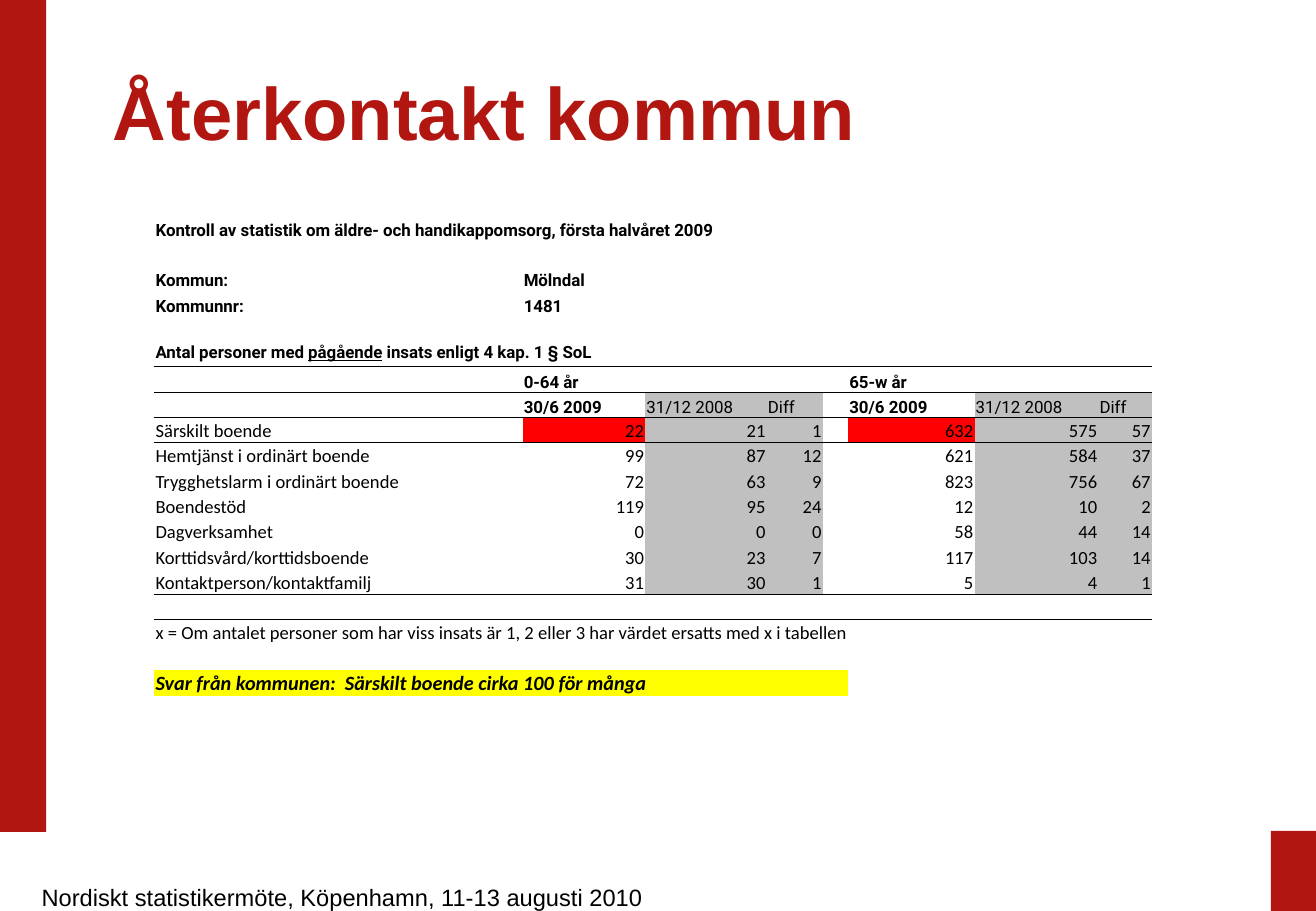
from dataclasses import dataclass

from lxml.etree import SubElement
from pptx import Presentation
from pptx.dml.color import RGBColor
from pptx.enum.shapes import MSO_SHAPE
from pptx.enum.text import MSO_ANCHOR, PP_ALIGN
from pptx.oxml import parse_xml
from pptx.oxml.ns import nsdecls, qn
from pptx.util import Inches, Pt


@dataclass(frozen=True)
class Theme:
    red: str = "B21611"
    ink: str = "000000"
    grey: str = "C0C0C0"
    alert: str = "FF0000"
    answer: str = "FFFF00"
    title_font: str = "Arial"
    head_font: str = "Roboto"
    body_font: str = "Calibri"
    title_size: int = 44
    footer_size: int = 14
    answer_size: int = 12
    body_size: int = 11
    head_size: int = 10
    empty_size: int = 8
    rule_width: float = 0.5
    plain_table: str = "{2D5ABB26-0587-4C30-8999-92F81FD0307C}"


class SlideBuilder:
    """Places elements; all lengths are percentages of the slide's size."""

    def __init__(self, presentation, theme):
        self.theme = theme
        self.width = presentation.slide_width
        self.height = presentation.slide_height
        self.slide = presentation.slides.add_slide(presentation.slide_layouts[6])

    def area(self, left, top, width, height):
        return (int(self.width * left / 100), int(self.height * top / 100),
                int(self.width * width / 100), int(self.height * height / 100))

    def style(self, paragraph, font, size, color, bold=False, italic=False):
        for run in paragraph.runs:
            run.font.name, run.font.size = font, Pt(size)
            run.font.bold, run.font.italic = bold, italic
            run.font.color.rgb = RGBColor.from_string(color)

    def block(self, *box):
        shape = self.slide.shapes.add_shape(MSO_SHAPE.RECTANGLE, *self.area(*box))
        shape.shadow.inherit = False
        shape.fill.solid()
        shape.fill.fore_color.rgb = RGBColor.from_string(self.theme.red)
        shape.line.fill.background()

    def text(self, box, text, size, color, bold=False,
             align=PP_ALIGN.LEFT, anchor=MSO_ANCHOR.TOP, spacing=1.0):
        text_frame = self.slide.shapes.add_textbox(*self.area(*box)).text_frame
        text_frame.word_wrap = True
        text_frame.vertical_anchor = anchor
        text_frame.text = text
        paragraph = text_frame.paragraphs[0]
        paragraph.alignment, paragraph.line_spacing = align, spacing
        self.style(paragraph, self.theme.title_font, size, color, bold)

    def table(self, box, row_count, column_weights):
        left, top, width, height = self.area(*box)
        frame = self.slide.shapes.add_table(
            row_count, len(column_weights), left, top, width, height)
        table = frame.table
        table.first_row = table.horz_banding = False
        table._tbl.tblPr.find(qn("a:tableStyleId")).text = self.theme.plain_table
        for column, weight in zip(table.columns, column_weights):
            column.width = int(width * weight / sum(column_weights))
        for row in table.rows:
            row.height = height // row_count
        for cell in table.iter_cells():
            cell.margin_left = cell.margin_right = cell.margin_top = Inches(0.01)
            cell.margin_bottom = 0
            cell.vertical_anchor = MSO_ANCHOR.BOTTOM
            cell.fill.background()
            # Small empty cells keep the rows from growing
            SubElement(cell.text_frame.paragraphs[0]._p, qn("a:endParaRPr"),
                       sz=str(self.theme.empty_size * 100))
        return table

    def cell(self, cell, text, font, size, bold=False, italic=False, right=False):
        cell.text_frame.text = text
        paragraph = cell.text_frame.paragraphs[0]
        paragraph.alignment = PP_ALIGN.RIGHT if right else PP_ALIGN.LEFT
        self.style(paragraph, font, size, self.theme.ink, bold, italic)

    def head(self, cell, text, bold=True):
        self.cell(cell, text, self.theme.head_font, self.theme.head_size, bold)

    def body(self, cell, text, right=False):
        self.cell(cell, text, self.theme.body_font, self.theme.body_size, right=right)

    def paint(self, cell, color):
        cell.fill.solid()
        cell.fill.fore_color.rgb = RGBColor.from_string(color)

    def rule_below(self, table, row, first_column=0):
        for column in range(first_column, len(table.columns)):
            for line_row, tag in ((row, "lnB"), (row + 1, "lnT")):
                properties = table.cell(line_row, column)._tc.get_or_add_tcPr()
                border = parse_xml(
                    f'<a:{tag} {nsdecls("a")} w="{Pt(self.theme.rule_width)}">'
                    f'<a:solidFill><a:srgbClr val="{self.theme.ink}"/></a:solidFill>'
                    f'</a:{tag}>')
                # The top line comes before the bottom line in the cell
                has_top = properties.find(qn("a:lnT")) is not None
                properties.insert(1 if tag == "lnB" and has_top else 0, border)


COLUMN_WEIGHTS = [3.03, 1.01, 1, 0.46, 0.21, 1.04, 1.02, 0.44]
ROW_COUNT = 19
GROUPS = {1: "0-64 år", 5: "65-w år"}
PERIODS = ["30/6 2009", "31/12 2008", "Diff"]
SERVICES = [
    ("Särskilt boende", (22, 21, 1), (632, 575, 57)),
    ("Hemtjänst i ordinärt boende", (99, 87, 12), (621, 584, 37)),
    ("Trygghetslarm i ordinärt boende", (72, 63, 9), (823, 756, 67)),
    ("Boendestöd", (119, 95, 24), (12, 10, 2)),
    ("Dagverksamhet", (0, 0, 0), (58, 44, 14)),
    ("Korttidsvård/korttidsboende", (30, 23, 7), (117, 103, 14)),
    ("Kontaktperson/kontaktfamilj", (31, 30, 1), (5, 4, 1)),
]
INTRO = {
    (0, 0): "Kontroll av statistik om äldre- och handikappomsorg, första halvåret 2009",
    (2, 0): "Kommun:", (2, 1): "Mölndal",
    (3, 0): "Kommunnr:", (3, 1): "1481",
}
CAPTION = ["Antal personer med ", "pågående", " insats enligt 4 kap. 1 § SoL"]
CAPTION_ROW, GROUP_ROW, PERIOD_ROW, FIRST_SERVICE_ROW = 5, 6, 7, 8
LAST_SERVICE_ROW = FIRST_SERVICE_ROW + len(SERVICES) - 1
NOTE_ROW, ANSWER_ROW = 16, 18
# (row, first column, last column)
MERGES = [(0, 0, 6), (CAPTION_ROW, 0, 4), (GROUP_ROW, 1, 3), (GROUP_ROW, 5, 7),
          (NOTE_ROW, 0, 7), (ANSWER_ROW, 0, 4)]


def fill_table(builder, table):
    theme = builder.theme
    for row, first, last in MERGES:
        table.cell(row, first).merge(table.cell(row, last))

    # Introduction and caption with one underlined word
    for position, text in INTRO.items():
        builder.head(table.cell(*position), text)
    caption = table.cell(CAPTION_ROW, 0)
    caption.vertical_anchor = MSO_ANCHOR.TOP
    paragraph = caption.text_frame.paragraphs[0]
    for text in CAPTION:
        paragraph.add_run().text = text
    builder.style(paragraph, theme.head_font, theme.head_size, theme.ink, True)
    paragraph.runs[1].font.underline = True

    # Age groups: headings, figures and shaded comparison columns
    for group, (start, name) in enumerate(GROUPS.items()):
        builder.head(table.cell(GROUP_ROW, start), name)
        for offset, period in enumerate(PERIODS):
            column = start + offset
            builder.head(table.cell(PERIOD_ROW, column), period, bold=offset == 0)
            for row, service in enumerate(SERVICES, FIRST_SERVICE_ROW):
                figure = service[1 + group][offset]
                builder.body(table.cell(row, column), str(figure), right=True)
            if offset:
                for row in range(PERIOD_ROW, LAST_SERVICE_ROW + 1):
                    builder.paint(table.cell(row, column), theme.grey)
        builder.paint(table.cell(FIRST_SERVICE_ROW, start), theme.alert)

    # Service names, note and answer
    for row, service in enumerate(SERVICES, FIRST_SERVICE_ROW):
        builder.body(table.cell(row, 0), service[0])
    builder.body(table.cell(NOTE_ROW, 0), "x = Om antalet personer som har viss insats "
                 "är 1, 2 eller 3 har värdet ersatts med x i tabellen")
    answer = table.cell(ANSWER_ROW, 0)
    builder.cell(answer, "Svar från kommunen:  Särskilt boende cirka 100 för många",
                 theme.body_font, theme.answer_size, bold=True, italic=True)
    builder.paint(answer, theme.answer)

    # Horizontal rules
    for row in (CAPTION_ROW, PERIOD_ROW, LAST_SERVICE_ROW):
        builder.rule_below(table, row)
    builder.rule_below(table, GROUP_ROW, first_column=1)


def main():
    presentation = Presentation()
    presentation.slide_width, presentation.slide_height = Inches(10.83), Inches(7.5)
    theme = Theme()
    builder = SlideBuilder(presentation, theme)

    # Red side bar and corner, footer
    builder.block(0, 0, 3.51, 91.33)
    builder.block(96.58, 91.2, 3.42, 8.8)
    builder.text((0, 96.27, 49.77, 3.73),
                 "Nordiskt statistikermöte, Köpenhamn, 11-13 augusti 2010",
                 theme.footer_size, theme.ink, align=PP_ALIGN.RIGHT)

    # Statistics table
    table = builder.table((11.73, 23.6, 75.81, 52.8), ROW_COUNT, COLUMN_WEIGHTS)
    fill_table(builder, table)

    # Title
    builder.text((7.66, 4.4, 85.04, 16.67), "Återkontakt kommun", theme.title_size,
                 theme.red, bold=True, anchor=MSO_ANCHOR.MIDDLE, spacing=0.9)
    presentation.save("out.pptx")


if __name__ == "__main__":
    main()
